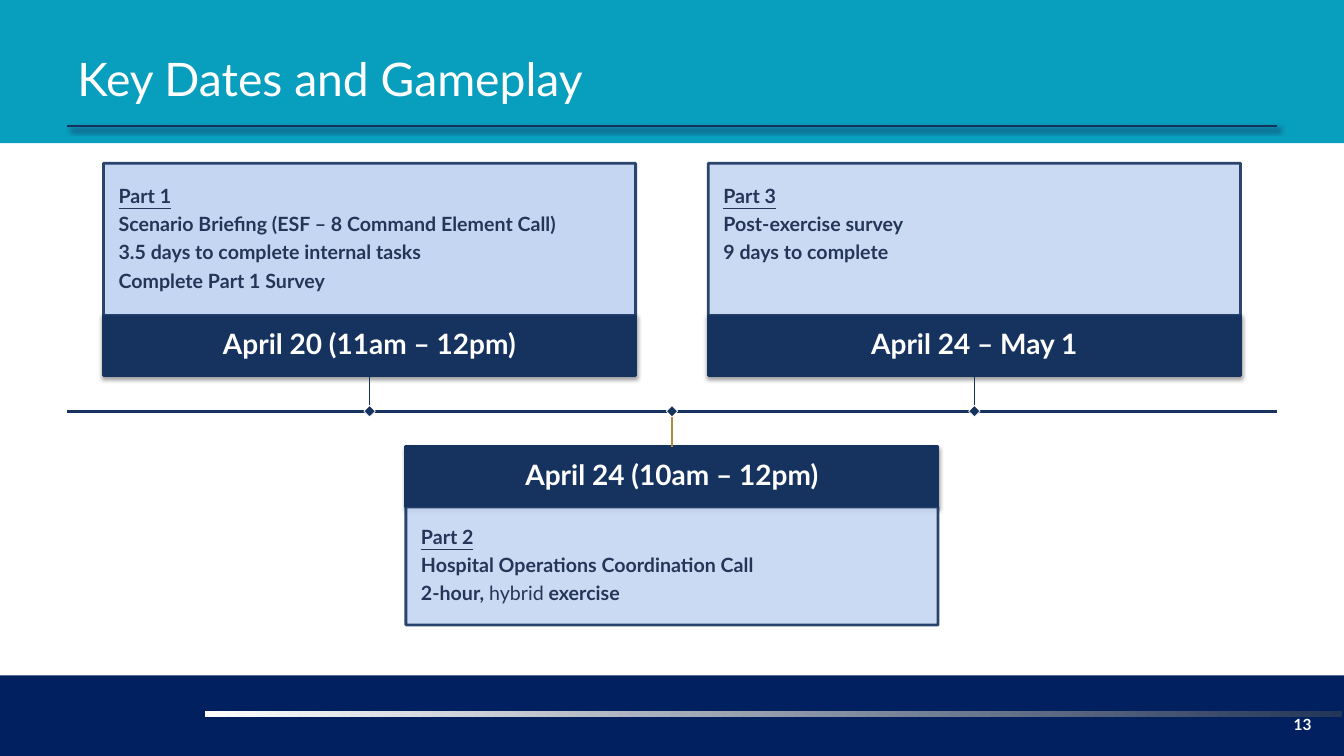
from dataclasses import dataclass
from typing import Optional

from lxml.etree import SubElement
from pptx import Presentation
from pptx.dml.color import RGBColor
from pptx.enum.shapes import MSO_CONNECTOR, MSO_SHAPE
from pptx.enum.text import MSO_ANCHOR, MSO_AUTO_SIZE, PP_ALIGN
from pptx.oxml.ns import qn
from pptx.util import Inches, Length, Pt

SLIDE_WIDTH, SLIDE_HEIGHT = Inches(13.33), Inches(7.5)


def columns(count: float) -> Length:
    """Forty columns across the slide."""
    return Length(round(SLIDE_WIDTH * count / 40))


def rows(count: float) -> Length:
    """One hundred rows down the slide."""
    return Length(round(SLIDE_HEIGHT * count / 100))


@dataclass(frozen=True)
class Theme:
    font: str = "Lato"
    white: str = "FFFFFF"
    teal: str = "079FBD"
    footer: str = "012060"
    navy: str = "16325E"
    rule: str = "16325C"
    text: str = "243658"
    pale: str = "C5D6F2"
    gold: str = "AD8B3A"
    title_size: int = 33
    date_size: int = 20
    body_size: int = 14
    number_size: int = 11


@dataclass(frozen=True)
class Shadow:
    color: str
    opacity: int
    blur: float
    distance: float
    angle: int


@dataclass(frozen=True)
class TextRun:
    text: str
    bold: bool = True
    underline: bool = False


@dataclass(frozen=True)
class Box:
    """Left and width in columns, top and height in rows."""
    left: float
    top: float
    width: float
    height: float


@dataclass(frozen=True)
class Milestone:
    center: float
    date: str
    heading: str
    details: tuple[tuple[TextRun, ...], ...]
    body_rows: float
    above: bool = True
    spare_lines: int = 0
    body_opacity: int = 90
    stem_color: str = Theme.navy


THEME = Theme()
RULE_SHADOW = Shadow("1D2B58", 79, 4, 3, 45)
DATE_SHADOW = Shadow("000000", 38, 3.1, 1.6, 90)
MARGIN, CARD_WIDTH = 2, 15.84
TIMELINE, STEM, DATE_ROWS = 54.4, 4.67, 8
DIAMOND = rows(1.07)
SPARE_LINE = Pt(20)

MILESTONES = (
    Milestone(11, "April 20 (11am – 12pm)", "Part 1", (
        (TextRun("Scenario Briefing (ESF – 8 Command Element Call)"),),
        (TextRun("3.5 days to complete internal tasks"),),
        (TextRun("Complete Part 1 Survey"),),
    ), 20.13, body_opacity=100),
    Milestone(20, "April 24 (10am – 12pm)", "Part 2", (
        (TextRun("Hospital Operations Coordination Call"),),
        (TextRun("2-hour, "), TextRun("hybrid", bold=False), TextRun(" exercise")),
    ), 15.6, above=False, stem_color=THEME.gold),
    Milestone(29, "April 24 – May 1", "Part 3", (
        (TextRun("Post-exercise survey"),),
        (TextRun("9 days to complete"),),
    ), 20.13, spare_lines=1),
)


def set_opacity(shape, fill_percent: int, line_percent: int) -> None:
    colors = list(shape.element.spPr.iter(qn("a:srgbClr")))
    for color, percent in zip(colors, (fill_percent, line_percent)):
        SubElement(color, qn("a:alpha"), val=str(percent * 1000))


def set_shadow(shape, shadow: Optional[Shadow] = None) -> None:
    properties = shape.element.spPr
    effects = properties.find(qn("a:effectLst"))
    if effects is None:
        effects = SubElement(properties, qn("a:effectLst"))
    if shadow:
        outer = SubElement(effects, qn("a:outerShdw"), blurRad=str(Pt(shadow.blur)),
                           dist=str(Pt(shadow.distance)), dir=str(shadow.angle * 60000),
                           algn="ctr", rotWithShape="0")
        color = SubElement(outer, qn("a:srgbClr"), val=shadow.color)
        SubElement(color, qn("a:alpha"), val=str(shadow.opacity * 1000))


def add_rectangle(slide, box: Box, fill: str, line: Optional[str] = None,
                  line_points: float = 2):
    shape = slide.shapes.add_shape(MSO_SHAPE.RECTANGLE, columns(box.left), rows(box.top),
                                   columns(box.width), rows(box.height))
    shape.shadow.inherit = False
    shape.fill.solid()
    shape.fill.fore_color.rgb = RGBColor.from_string(fill)
    if line:
        shape.line.color.rgb = RGBColor.from_string(line)
        shape.line.width = Pt(line_points)
    else:
        shape.line.fill.background()
    return shape


def add_line(slide, start: tuple[float, float], end: tuple[float, float], color: str,
             points: float, shadow: Optional[Shadow] = None) -> None:
    line = slide.shapes.add_connector(MSO_CONNECTOR.STRAIGHT, columns(start[0]),
                                      rows(start[1]), columns(end[0]), rows(end[1]))
    line.line.color.rgb = RGBColor.from_string(color)
    line.line.width = Pt(points)
    set_shadow(line, shadow)


def write_text(shape, lines: tuple[tuple[TextRun, ...], ...], size: int, color: str,
               align: PP_ALIGN, inset: Optional[float] = None, spacing: float = 1,
               anchor: MSO_ANCHOR = MSO_ANCHOR.MIDDLE) -> None:
    frame = shape.text_frame
    frame.word_wrap = True
    frame.auto_size = MSO_AUTO_SIZE.NONE
    frame.vertical_anchor = anchor
    if inset is not None:
        frame.margin_left = frame.margin_right = Inches(inset)
        frame.margin_top = frame.margin_bottom = Inches(inset)
    for index, line in enumerate(lines):
        paragraph = frame.add_paragraph() if index else frame.paragraphs[0]
        paragraph.alignment = align
        paragraph.line_spacing = spacing
        if spacing < 1:
            paragraph.space_after = Pt(round(size * 0.35))
        for text_run in line:
            run = paragraph.add_run()
            run.text = text_run.text
            run.font.name = THEME.font
            run.font.size = Pt(size)
            run.font.bold = text_run.bold
            run.font.underline = text_run.underline
            run.font.color.rgb = RGBColor.from_string(color)


def add_frame(slide) -> None:
    # Bands and rules
    add_rectangle(slide, Box(0, 89.33, 40, 10.67), THEME.footer)
    add_rectangle(slide, Box(0, 0, 40, 18.93), THEME.teal)
    bar = add_rectangle(slide, Box(6.1, 94, 33.84, 0.8), THEME.white)
    bar.fill.gradient()
    bar.fill.gradient_angle = 180
    for position, (stop, color) in enumerate(zip(bar.fill.gradient_stops,
                                                 (THEME.text, THEME.white))):
        stop.position = position
        stop.color.rgb = RGBColor.from_string(color)
    add_line(slide, (MARGIN, 16.67), (40 - MARGIN, 16.67), THEME.rule, 1.5, RULE_SHADOW)

    # Title, brought in front of the bands
    title = slide.shapes.title
    title.left, title.top = columns(MARGIN), rows(4)
    title.width, title.height = columns(40 - 2 * MARGIN), rows(12.67)
    write_text(title, ((TextRun("Key Dates and Gameplay", bold=False),),),
               THEME.title_size, THEME.white, PP_ALIGN.LEFT)
    title.element.getparent().append(title.element)

    # Slide number
    number = slide.shapes.add_textbox(columns(36.9), rows(94), columns(2.43), rows(4))
    write_text(number, ((TextRun("13"),),), THEME.number_size, THEME.white,
               PP_ALIGN.RIGHT, anchor=MSO_ANCHOR.TOP)


def add_milestone(slide, milestone: Milestone) -> None:
    left = milestone.center - CARD_WIDTH / 2
    if milestone.above:
        stem_end = TIMELINE - STEM
        date_top = stem_end - DATE_ROWS
        body_top = date_top - milestone.body_rows
    else:
        stem_end = date_top = TIMELINE + STEM
        body_top = date_top + DATE_ROWS

    # Date bar
    date = add_rectangle(slide, Box(left, date_top, CARD_WIDTH, DATE_ROWS),
                         THEME.navy, THEME.navy)
    set_shadow(date, DATE_SHADOW)
    write_text(date, ((TextRun(milestone.date),),), THEME.date_size, THEME.white,
               PP_ALIGN.CENTER, 0.11, 0.9)

    # Details
    body = add_rectangle(slide, Box(left, body_top, CARD_WIDTH, milestone.body_rows),
                         THEME.pale, THEME.navy)
    set_opacity(body, milestone.body_opacity, 90)
    heading = (TextRun(milestone.heading, underline=True),)
    write_text(body, (heading, *milestone.details), THEME.body_size, THEME.text,
               PP_ALIGN.LEFT, 0.15, 0.9)
    body.text_frame.margin_bottom += milestone.spare_lines * SPARE_LINE

    # Stem and marker
    add_line(slide, (milestone.center, TIMELINE), (milestone.center, stem_end),
             milestone.stem_color, 0.75)
    marker = add_rectangle(slide, Box(milestone.center, TIMELINE, 1, 1),
                           THEME.navy, THEME.white, 0.5)
    marker.width = marker.height = DIAMOND
    marker.left -= DIAMOND // 2
    marker.top -= DIAMOND // 2
    marker.rotation = 45


def main() -> None:
    presentation = Presentation()
    presentation.slide_width, presentation.slide_height = SLIDE_WIDTH, SLIDE_HEIGHT
    slide = presentation.slides.add_slide(presentation.slide_layouts[5])
    add_frame(slide)
    add_line(slide, (MARGIN, TIMELINE), (40 - MARGIN, TIMELINE), THEME.navy, 2)
    for milestone in MILESTONES:
        add_milestone(slide, milestone)
    presentation.save("out.pptx")


if __name__ == "__main__":
    main()
